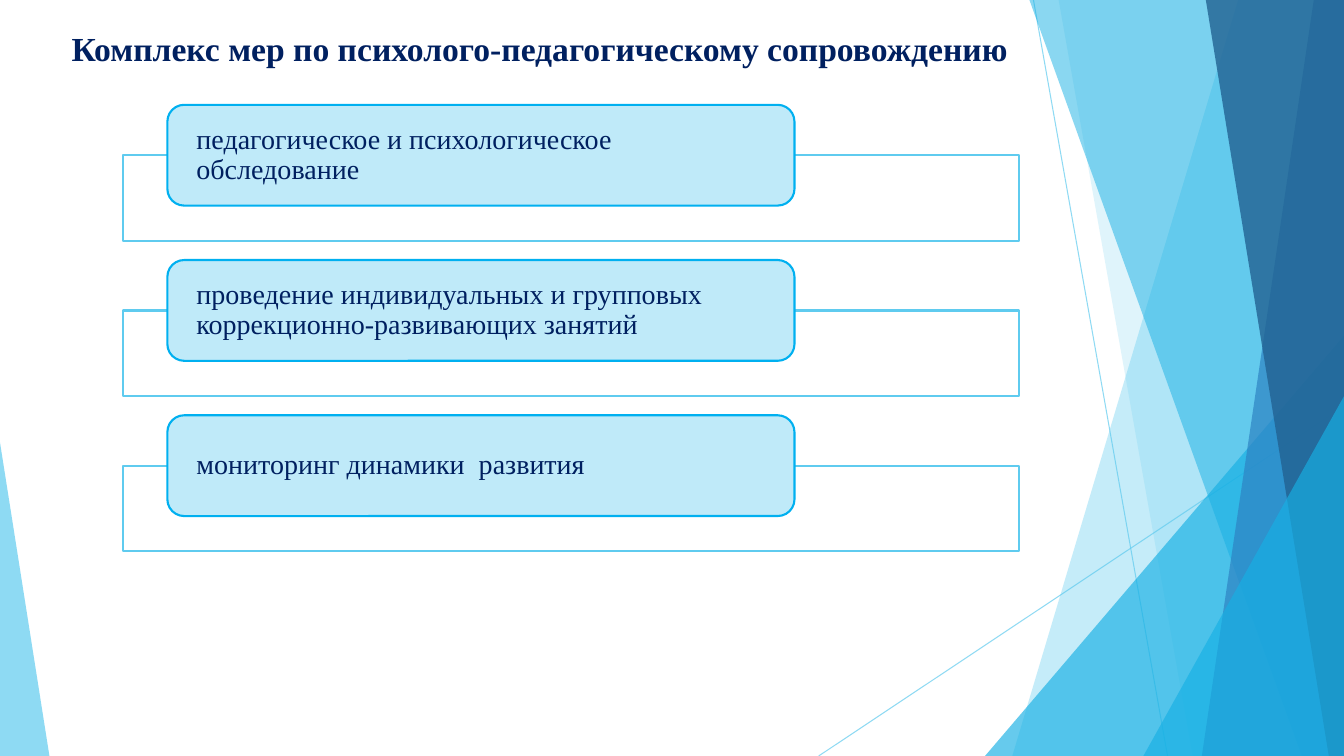
from dataclasses import dataclass

from lxml.etree import SubElement
from pptx import Presentation
from pptx.dml.color import RGBColor
from pptx.enum.shapes import MSO_CONNECTOR, MSO_SHAPE
from pptx.enum.text import MSO_ANCHOR, MSO_AUTO_SIZE, PP_ALIGN
from pptx.oxml.ns import qn
from pptx.util import Emu, Pt

PX = 9144  # 100 px to the inch
WIDTH, HEIGHT = 1333, 750
FONT = "Times New Roman"

WHITE = RGBColor(0xFF, 0xFF, 0xFF)
NAVY = RGBColor(0x00, 0x20, 0x60)
SKY = RGBColor(0x5F, 0xCB, 0xEF)
PALE_SKY = RGBColor(0xBF, 0xEA, 0xF9)
BRIGHT = RGBColor(0x00, 0xB0, 0xF0)
CYAN = RGBColor(0x17, 0xB0, 0xE4)
BLUE = RGBColor(0x2E, 0x83, 0xC3)
DEEP_BLUE = RGBColor(0x22, 0x62, 0x92)


@dataclass
class Ray:
    start: tuple[int, int]
    end: tuple[int, int]


@dataclass
class Band:
    """Facet from the top edge to the bottom edge, bounded by the right side."""
    top_x: int
    bottom_x: int
    color: RGBColor
    opacity: int


@dataclass
class Triangle:
    left: int
    top: int
    width: int
    apex: int  # 0 at the left, 1 at the right
    color: RGBColor
    opacity: int


RAYS = [Ray((1025, 0), (1158, HEIGHT)), Ray((WIDTH, 403), (812, HEIGHT))]
FACETS = [
    Band(1228, 1004, SKY, 36),
    Band(1050, 1183, SKY, 20),
    Triangle(977, 333, 356, 1, CYAN, 66),
    Band(1021, 1291, CYAN, 50),
    Band(1303, 1192, BLUE, 70),
    Band(1196, 1318, DEEP_BLUE, 80),
    Triangle(1134, 393, 199, 1, CYAN, 66),
    Triangle(0, 439, 49, 0, SKY, 70),
]

TITLE = "Комплекс мер по психолого-педагогическому сопровождению"
MEASURES = [
    "педагогическое и психологическое обследование",
    "проведение индивидуальных и групповых коррекционно-развивающих занятий",
    "мониторинг динамики  развития",
]
FIRST_TOP, MEASURE_STEP = 104, 154


def px(value: int) -> Emu:
    return Emu(value * PX)


def set_opacity(element, percent: int) -> None:
    color = next(element.iter(qn("a:srgbClr")))
    SubElement(color, qn("a:alpha"), val=str(percent * 1000))


def paint(shape, color: RGBColor, opacity: int = 100, outline: RGBColor | None = None) -> None:
    shape.shadow.inherit = False
    shape.fill.solid()
    shape.fill.fore_color.rgb = color
    if opacity < 100:
        set_opacity(shape._element.spPr.find(qn("a:solidFill")), opacity)
    if outline is None:
        shape.line.fill.background()
    else:
        shape.line.color.rgb = outline
        shape.line.width = Pt(1.5)


def add_shape(slide, kind: MSO_SHAPE, left: int, top: int, width: int, height: int):
    return slide.shapes.add_shape(kind, px(left), px(top), px(width), px(height))


def draw_ray(slide, ray: Ray) -> None:
    line = slide.shapes.add_connector(
        MSO_CONNECTOR.STRAIGHT, *map(px, ray.start), *map(px, ray.end))
    line.line.color.rgb = SKY
    line.line.width = Pt(0.75)
    properties = line._element.spPr
    set_opacity(properties.find(qn("a:ln")), 70)
    SubElement(properties, qn("a:effectLst"))


def draw_facet(slide, facet: Band | Triangle) -> None:
    if isinstance(facet, Band):
        builder = slide.shapes.build_freeform(facet.top_x, 0, scale=PX)
        builder.add_line_segments(
            [(WIDTH, 0), (WIDTH, HEIGHT), (facet.bottom_x, HEIGHT)], close=True)
        shape = builder.convert_to_shape()
    else:
        shape = add_shape(slide, MSO_SHAPE.ISOSCELES_TRIANGLE, facet.left, facet.top,
                          facet.width, HEIGHT - facet.top)
        shape.adjustments[0] = facet.apex
    paint(shape, facet.color, facet.opacity)


def write_text(shape, text: str, size: int, bold: bool = False) -> None:
    paragraph = shape.text_frame.paragraphs[0]
    paragraph.text = text
    paragraph.alignment = PP_ALIGN.LEFT
    paragraph.font.name = FONT
    paragraph.font.size = Pt(size)
    paragraph.font.bold = bold
    paragraph.font.color.rgb = NAVY


def fill_title(slide) -> None:
    title = slide.shapes.title
    title.left, title.top, title.width, title.height = map(px, (61, 23, 954, 50))
    frame = title.text_frame
    frame.word_wrap = False
    frame.auto_size = MSO_AUTO_SIZE.SHAPE_TO_FIT_TEXT
    frame.vertical_anchor = MSO_ANCHOR.TOP
    write_text(title, TITLE, 24, bold=True)


def draw_measure(slide, text: str, top: int) -> None:
    frame_box = add_shape(slide, MSO_SHAPE.RECTANGLE, 122, top + 50, 889, 85)
    paint(frame_box, WHITE, 90, SKY)

    label = add_shape(slide, MSO_SHAPE.ROUNDED_RECTANGLE, 166, top, 622, 100)
    paint(label, PALE_SKY, outline=BRIGHT)
    frame = label.text_frame
    frame.word_wrap = True
    frame.vertical_anchor = MSO_ANCHOR.MIDDLE
    frame.margin_left = frame.margin_right = px(24)
    frame.margin_top = frame.margin_bottom = 0
    write_text(label, text, 20)
    frame.paragraphs[0].line_spacing = 0.9


def main() -> None:
    presentation = Presentation()
    presentation.slide_width, presentation.slide_height = px(WIDTH), px(HEIGHT)
    slide = presentation.slides.add_slide(presentation.slide_layouts[5])

    # Faceted background
    for ray in RAYS:
        draw_ray(slide, ray)
    for facet in FACETS:
        draw_facet(slide, facet)

    # Title and list of measures
    fill_title(slide)
    for index, text in enumerate(MEASURES):
        draw_measure(slide, text, FIRST_TOP + index * MEASURE_STEP)

    presentation.save("out.pptx")


if __name__ == "__main__":
    main()
